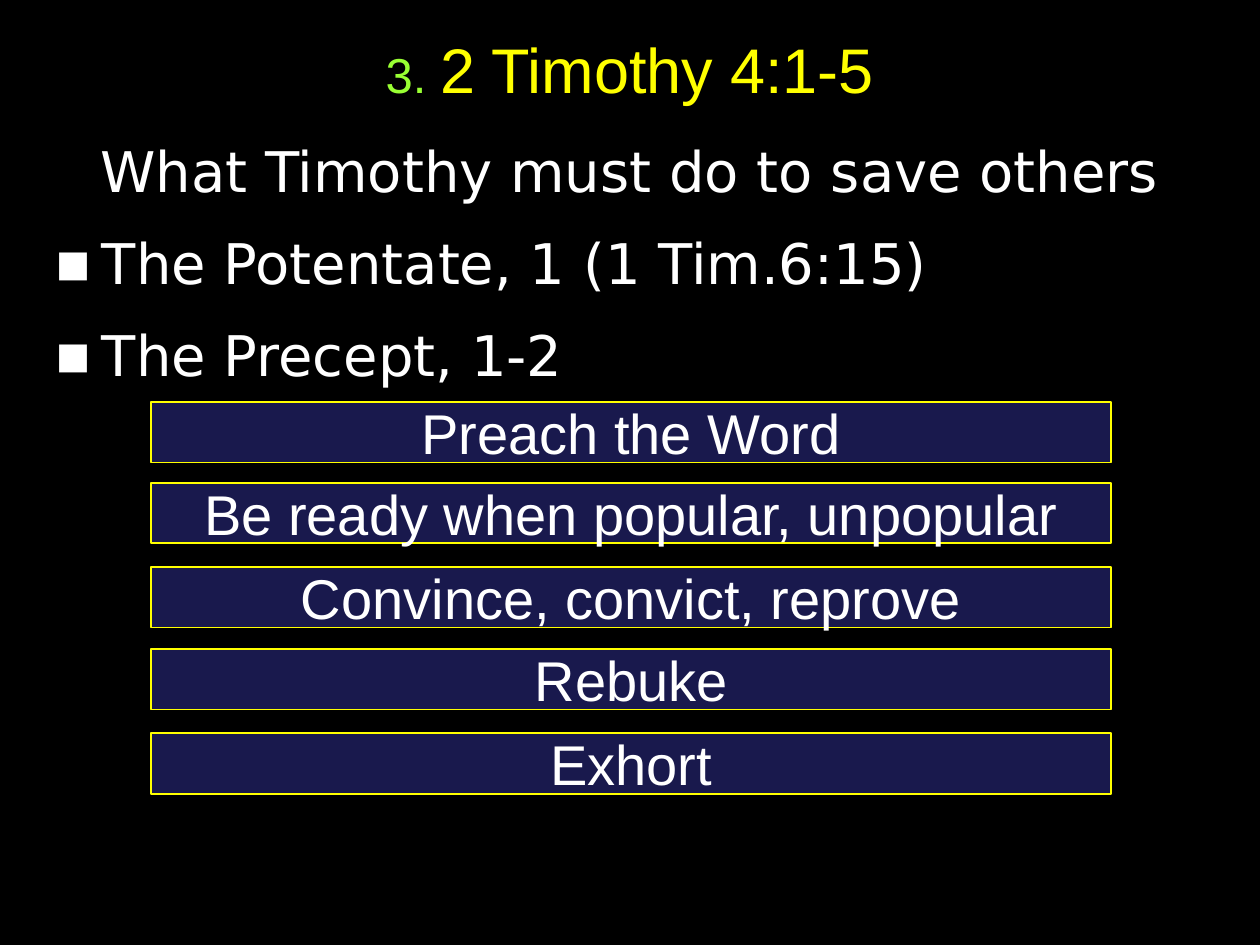
"""Build the 2 Timothy 4:1-5 slide with its outline and five charges."""
from dataclasses import dataclass

from lxml.etree import SubElement
from pptx import Presentation
from pptx.dml.color import RGBColor
from pptx.enum.shapes import MSO_SHAPE
from pptx.enum.text import MSO_ANCHOR, MSO_AUTO_SIZE, PP_ALIGN
from pptx.oxml.ns import qn
from pptx.util import Pt

COLORS = {
    "background": "000000",
    "number": "99FF33",
    "accent": "FFFF00",
    "text": "FFFFFF",
    "panel": "19194D",
}
BULLET_INDENT = 27


@dataclass(frozen=True)
class Span:
    text: str
    size: float
    color: str
    font: str = "Arial"


@dataclass(frozen=True)
class Point:
    text: str
    bulleted: bool = True


@dataclass(frozen=True)
class Charge:
    text: str
    top: float


TITLE = (Span("3. ", 28, "number"), Span("2 Timothy 4:1-5", 36, "accent"))
POINTS = (
    Point("What Timothy must do to save others", bulleted=False),
    Point("The Potentate, 1 (1 Tim.6:15)"),
    Point("The Precept, 1-2"),
)
CHARGES = (
    Charge("Preach the Word", 229.7),
    Charge("Be ready when popular, unpopular", 275.8),
    Charge("Convince, convict, reprove", 324),
    Charge("Rebuke", 370.8),
    Charge("Exhort", 419),
)


def color(name: str) -> RGBColor:
    """Look up a named colour."""
    return RGBColor.from_string(COLORS[name])


def place(shape, left: float, top: float, width: float, height: float) -> None:
    """Set the position and size of a shape in points."""
    shape.left, shape.top = Pt(left), Pt(top)
    shape.width, shape.height = Pt(width), Pt(height)


def add_span(paragraph, span: Span) -> None:
    """Append one formatted run to a paragraph."""
    run = paragraph.add_run()
    run.text = span.text
    run.font.name = span.font
    run.font.size = Pt(span.size)
    run.font.color.rgb = color(span.color)


def set_bullet(paragraph, bulleted: bool) -> None:
    """Give a paragraph a square bullet with a hanging indent, or none."""
    properties = paragraph._p.get_or_add_pPr()
    indent = int(Pt(BULLET_INDENT)) if bulleted else 0
    properties.set("marL", str(indent))
    properties.set("indent", str(-indent))
    if bulleted:
        SubElement(properties, qn("a:buFont"), typeface="DejaVu Sans")
        SubElement(properties, qn("a:buChar"), char="▪")
    else:
        SubElement(properties, qn("a:buNone"))


def fill_title(title) -> None:
    """Place the title and write its runs."""
    place(title, 36, 6, 648, 66)
    frame = title.text_frame
    frame.auto_size = MSO_AUTO_SIZE.NONE
    frame.vertical_anchor = MSO_ANCHOR.MIDDLE
    paragraph = frame.paragraphs[0]
    paragraph.alignment = PP_ALIGN.CENTER
    for span in TITLE:
        add_span(paragraph, span)


def fill_body(body) -> None:
    """Place the body and write the outline points."""
    place(body, 24, 72, 672, 450)
    frame = body.text_frame
    frame.auto_size = MSO_AUTO_SIZE.NONE
    frame.margin_top = Pt(6)
    for index, point in enumerate(POINTS):
        paragraph = frame.add_paragraph() if index else frame.paragraphs[0]
        set_bullet(paragraph, point.bulleted)
        paragraph.alignment = PP_ALIGN.LEFT if point.bulleted else PP_ALIGN.CENTER
        paragraph.space_before = Pt(6.4 if index else 0)
        paragraph.space_after = Pt(7.7)
        add_span(paragraph, Span(point.text, 32, "text", "DejaVu Sans"))


def add_charge(page, charge: Charge) -> None:
    """Draw one outlined panel with its centred text."""
    box = page.shapes.add_shape(
        MSO_SHAPE.RECTANGLE, Pt(86.4), Pt(charge.top), Pt(548.6), Pt(34.6)
    )
    box.shadow.inherit = False
    box.fill.solid()
    box.fill.fore_color.rgb = color("panel")
    box.line.color.rgb = color("accent")
    box.line.width = Pt(1)
    frame = box.text_frame
    frame.word_wrap = True
    frame.vertical_anchor = MSO_ANCHOR.MIDDLE
    paragraph = frame.paragraphs[0]
    paragraph.alignment = PP_ALIGN.CENTER
    add_span(paragraph, Span(charge.text, 32, "text"))


def main() -> None:
    """Build and save the deck."""
    deck = Presentation()
    deck.slide_width, deck.slide_height = Pt(720), Pt(540)
    page = deck.slides.add_slide(deck.slide_layouts[1])
    page.background.fill.solid()
    page.background.fill.fore_color.rgb = color("background")
    fill_title(page.shapes.title)
    fill_body(page.placeholders[1])
    for charge in CHARGES:
        add_charge(page, charge)
    deck.save("out.pptx")


if __name__ == "__main__":
    main()
